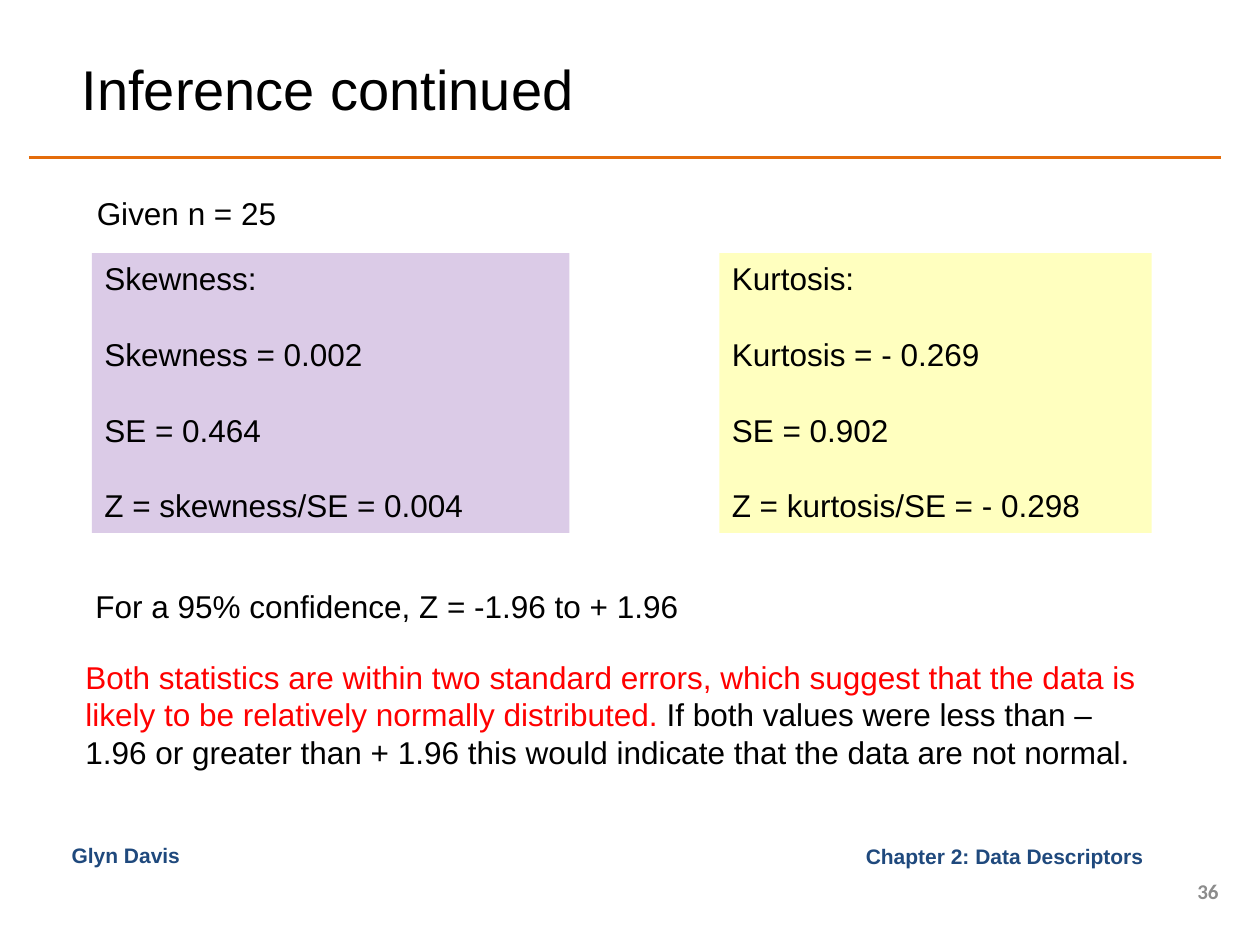
from lxml import etree
from pptx import Presentation
from pptx.dml.color import RGBColor
from pptx.enum.shapes import MSO_CONNECTOR, MSO_SHAPE
from pptx.enum.text import MSO_ANCHOR as ANCHOR, PP_ALIGN as ALIGN
from pptx.oxml.ns import qn
from pptx.util import Inches, Pt

COLORS = {
    "black": "000000",
    "red": "FF0000",
    "orange": "E46C0A",
    "navy": "1F497D",
    "gray": "8C8C8C",
    "purple": "7030A0",
    "yellow": "FFFF00",
}


def color(name):
    return RGBColor.from_string(COLORS[name])


def write(shape, paragraphs, size=18, font="Arial", bold=False, wrap=True,
          align=ALIGN.LEFT, anchor=ANCHOR.TOP, gap=0):
    """Fill a shape with paragraphs, each a list of (text, color) runs."""
    frame = shape.text_frame
    frame.word_wrap = wrap
    frame.vertical_anchor = anchor
    for index, runs in enumerate(paragraphs):
        paragraph = frame.add_paragraph() if index else frame.paragraphs[0]
        paragraph.alignment = align
        paragraph.space_before = Pt(gap if index else 0)
        for text, color_name in runs:
            run = paragraph.add_run()
            run.text = text
            run.font.size = Pt(size)
            run.font.name = font
            run.font.bold = bold
            run.font.color.rgb = color(color_name)


presentation = Presentation()
presentation.slide_width = Inches(10)
presentation.slide_height = Inches(7.5)
slide = presentation.slides.add_slide(presentation.slide_layouts[6])

# Rule under the title
rule = slide.shapes.add_connector(
    MSO_CONNECTOR.STRAIGHT, Inches(0.23), Inches(1.25), Inches(9.69), Inches(1.25))
rule.line.color.rgb = color("orange")
rule.line.width = Pt(2)
etree.SubElement(rule._element.spPr, qn("a:effectLst"))

# Title, footers and statements
conclusion = [
    ("Both statistics are within two standard errors, which suggest that the data "
     "is likely to be relatively normally distributed.", "red"),
    (" If both values were less than – 1.96 or greater than + 1.96 this would "
     "indicate that the data are not normal.", "black"),
]
footer = {"size": 12, "bold": True}
right = {"align": ALIGN.RIGHT, "anchor": ANCHOR.MIDDLE}
texts = [
    ((0.55, 0.31, 7.58, 0.78), [("Inference continued", "black")],
     {"size": 32, "anchor": ANCHOR.MIDDLE}),
    ((5.47, 6.64, 3.75, 0.31), [("Chapter 2: Data Descriptors ", "navy")],
     {**footer, **right}),
    ((9.3, 6.95, 0.47, 0.24), [("36", "gray")],
     {**footer, **right, "font": "Calibri"}),
    ((0.47, 6.64, 2.97, 0.31), [("Glyn Davis", "navy")], footer),
    ((0.67, 1.49, 1.64, 0.4), [("Given n = 25", "black")], {"wrap": False}),
    ((0.66, 4.61, 4.87, 0.4),
     [("For a 95% confidence, Z = -1.96 to + 1.96", "black")], {"wrap": False}),
    ((0.58, 5.17, 8.56, 1.01), conclusion, {}),
]
for position, runs, style in texts:
    box = slide.shapes.add_textbox(*map(Inches, position))
    write(box, [runs], **style)

# Skewness and kurtosis panels
panels = [
    (0.73, 3.79, "purple", ["Skewness:", "Skewness = 0.002", "SE = 0.464",
                            "Z = skewness/SE = 0.004"]),
    (5.71, 3.43, "yellow", ["Kurtosis:", "Kurtosis = - 0.269", "SE = 0.902",
                            "Z = kurtosis/SE = - 0.298"]),
]
for left, width, fill_name, lines in panels:
    panel = slide.shapes.add_shape(
        MSO_SHAPE.RECTANGLE, Inches(left), Inches(2.01), Inches(width), Inches(2.22))
    panel.shadow.inherit = False
    panel.line.fill.background()
    panel.fill.solid()
    panel.fill.fore_color.rgb = color(fill_name)
    fill_color = panel._element.spPr.find(qn("a:solidFill")).find(qn("a:srgbClr"))
    etree.SubElement(fill_color, qn("a:alpha"), val="25000")
    write(panel, [[(line, "black")] for line in lines], gap=21.6)

presentation.save("out.pptx")
